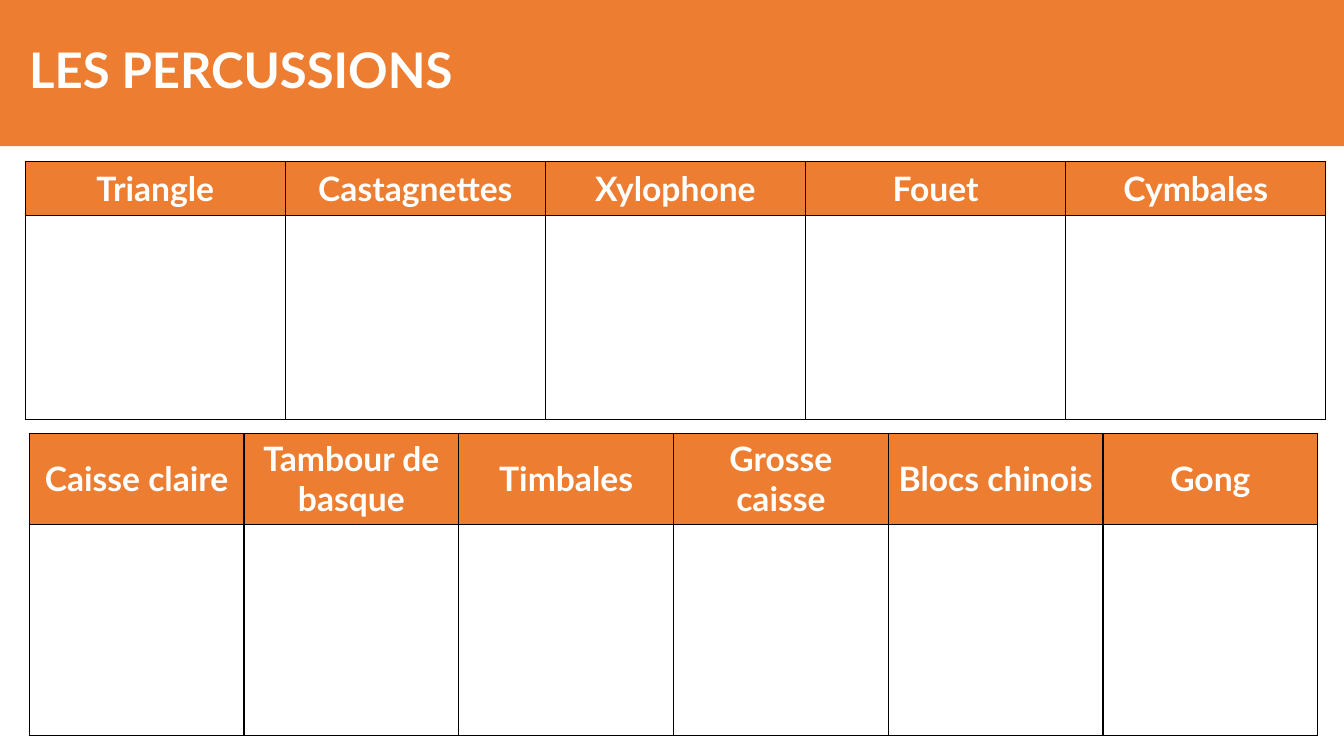
import pptx
import pptx.dml.color
import pptx.enum.shapes
import pptx.enum.text
import pptx.oxml
import pptx.oxml.ns
import pptx.util
from pptx.util import Inches

COLORS = {"orange": "ED7D31", "white": "FFFFFF", "black": "000000"}
FONT = "Lato"
ALIGN = pptx.enum.text.PP_ALIGN
MIDDLE = pptx.enum.text.MSO_ANCHOR.MIDDLE


def color(name):
    return pptx.dml.color.RGBColor.from_string(COLORS[name])


def write_text(frame, text, size=24, align=ALIGN.CENTER, line_spacing=None):
    paragraph = frame.paragraphs[0]
    paragraph.alignment = align
    paragraph.line_spacing = line_spacing
    run = paragraph.add_run()
    run.text = text
    run.font.name = FONT
    run.font.size = pptx.util.Pt(size)
    run.font.bold = True
    run.font.color.rgb = color("white")


class SlideBuilder:
    """Holds the style and the current slide."""

    def __init__(self, slide, border_width=1):
        self.slide = slide
        self.border_width = pptx.util.Pt(border_width)

    def banner(self, text, width, height):
        shape = self.slide.shapes.add_shape(
            pptx.enum.shapes.MSO_SHAPE.RECTANGLE, 0, 0, Inches(width), Inches(height))
        shape.shadow.inherit = False
        shape.fill.solid()
        shape.fill.fore_color.rgb = color("orange")
        shape.line.fill.background()
        frame = shape.text_frame
        frame.word_wrap = True
        frame.vertical_anchor = MIDDLE
        frame.margin_left = Inches(0.29)
        write_text(frame, text, size=35, align=ALIGN.LEFT, line_spacing=0.9)

    def border(self, cell):
        properties = cell._tc.get_or_add_tcPr()
        for index, side in enumerate(("lnL", "lnR", "lnT", "lnB")):
            line = pptx.oxml.parse_xml(
                f'<a:{side} {pptx.oxml.ns.nsdecls("a")} w="{self.border_width}">'
                f'<a:solidFill><a:srgbClr val="{COLORS["black"]}"/></a:solidFill>'
                f'</a:{side}>')
            properties.insert(index, line)

    def instrument_table(self, names, left, top, column_width, row_heights):
        table = self.slide.shapes.add_table(
            len(row_heights), len(names), Inches(left), Inches(top),
            Inches(column_width * len(names)), Inches(sum(row_heights))).table
        for column in table.columns:
            column.width = Inches(column_width)
        for row, height in zip(table.rows, row_heights):
            row.height = Inches(height)
        for cell in table.iter_cells():
            cell.fill.solid()
            cell.fill.fore_color.rgb = color("white")
            self.border(cell)
        for cell, name in zip(table.rows[0].cells, names):
            cell.fill.fore_color.rgb = color("orange")
            cell.vertical_anchor = MIDDLE
            write_text(cell.text_frame, name)


def main():
    presentation = pptx.Presentation()
    presentation.slide_width = Inches(13.33)
    presentation.slide_height = Inches(7.5)
    slide = presentation.slides.add_slide(presentation.slide_layouts[6])
    builder = SlideBuilder(slide)

    # First row of instruments
    builder.instrument_table(
        ["Triangle", "Castagnettes", "Xylophone", "Fouet", "Cymbales"],
        left=0.25, top=1.6, column_width=2.58, row_heights=[0.54, 2.02])

    # Title banner
    builder.banner("LES PERCUSSIONS", width=13.33, height=1.45)

    # Second row of instruments
    builder.instrument_table(
        ["Caisse claire", "Tambour de basque", "Timbales",
         "Grosse caisse", "Blocs chinois", "Gong"],
        left=0.29, top=4.3, column_width=2.13, row_heights=[0.83, 2.1])

    presentation.save("out.pptx")


if __name__ == "__main__":
    main()
